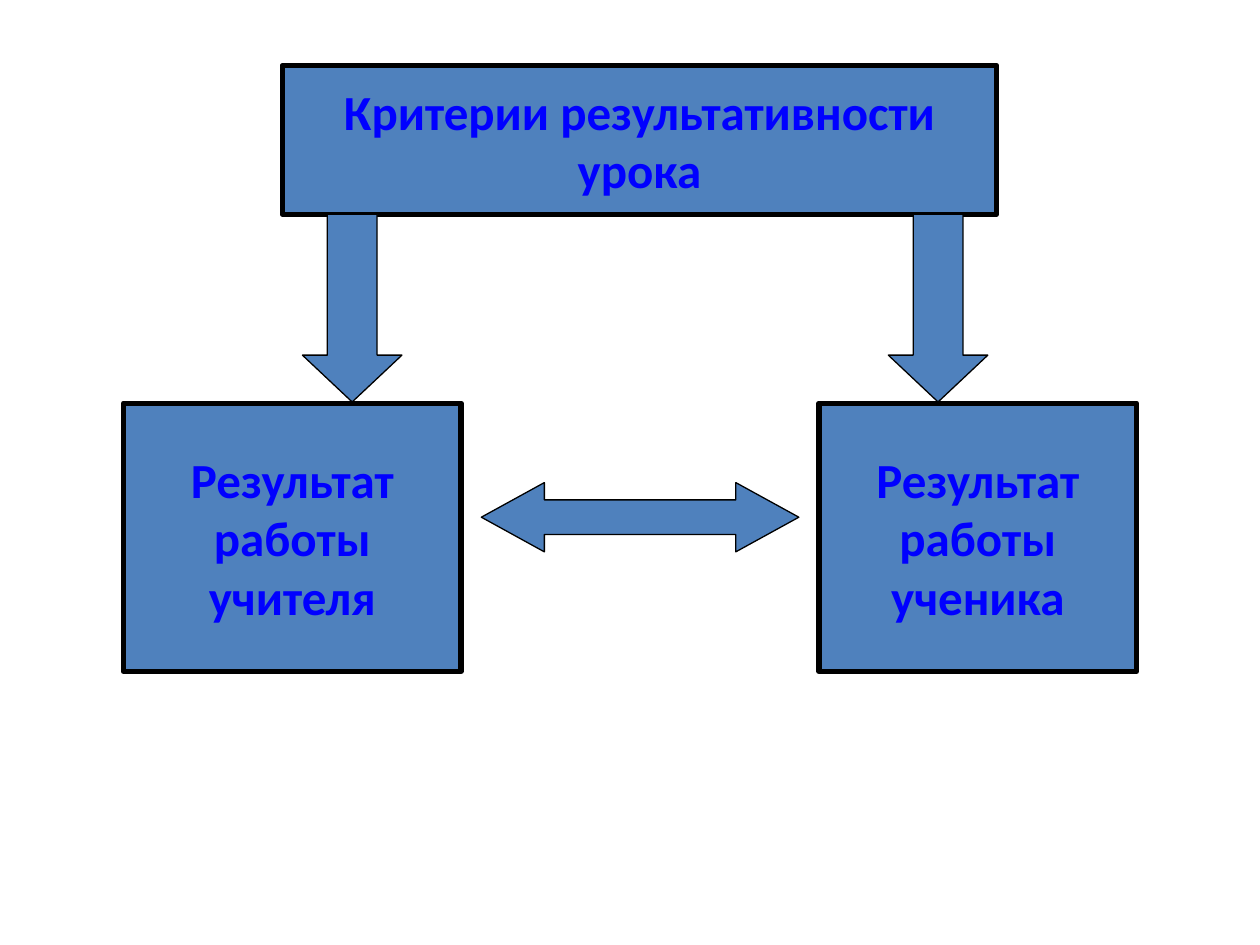
import pptx
import pptx.dml.color
import pptx.enum.shapes
import pptx.enum.text
import pptx.util

Inches = pptx.util.Inches
Shapes = pptx.enum.shapes.MSO_SHAPE


def color(hex_string):
    return pptx.dml.color.RGBColor.from_string(hex_string)


def add_figure(kind, position, line_width):
    """Add a blue preset shape with a black outline and no shadow."""
    shape = slide.shapes.add_shape(kind, *[Inches(length) for length in position])
    shape.shadow.inherit = False
    shape.fill.solid()
    shape.fill.fore_color.rgb = color("4F81BD")
    shape.line.color.rgb = color("000000")
    shape.line.width = pptx.util.Pt(line_width)
    return shape


presentation = pptx.Presentation()
presentation.slide_width = Inches(10)
presentation.slide_height = Inches(7.5)
slide = presentation.slides.add_slide(presentation.slide_layouts[6])

# Boxes: the criteria above, the two results below
box_top, box_height = 3.2, 2.13
boxes = [
    ((2.24, 0.52, 5.67, 1.18), ["Критерии результативности", "урока"]),
    ((6.5, box_top, 2.52, box_height), ["Результат", " работы ", "ученика"]),
    ((0.98, box_top, 2.68, box_height), ["Результат", " работы ", "учителя"]),
]
font_format = {"name": "Calibri", "size": pptx.util.Pt(28), "bold": True}
for position, lines in boxes:
    box = add_figure(Shapes.RECTANGLE, position, 3)
    frame = box.text_frame
    frame.word_wrap = False
    frame.vertical_anchor = pptx.enum.text.MSO_ANCHOR.MIDDLE
    frame.text = "\n".join(lines)
    for paragraph in frame.paragraphs:
        paragraph.alignment = pptx.enum.text.PP_ALIGN.CENTER
        font = paragraph.runs[0].font
        font.color.rgb = color("0000FF")
        for name, value in font_format.items():
            setattr(font, name, value)

# Arrows: between the results, and from the criteria down to each result
arrows = [(Shapes.LEFT_RIGHT_ARROW, (3.82, 3.83, 2.52, 0.55), 0.91)]
for left in (2.4, 7.05):
    arrows.append((Shapes.DOWN_ARROW, (left, 1.7, 0.79, 1.49), 0.47))
for kind, position, head_length in arrows:
    arrow = add_figure(kind, position, 0.75)
    arrow.adjustments[0] = 0.5
    arrow.adjustments[1] = head_length

presentation.save("out.pptx")
